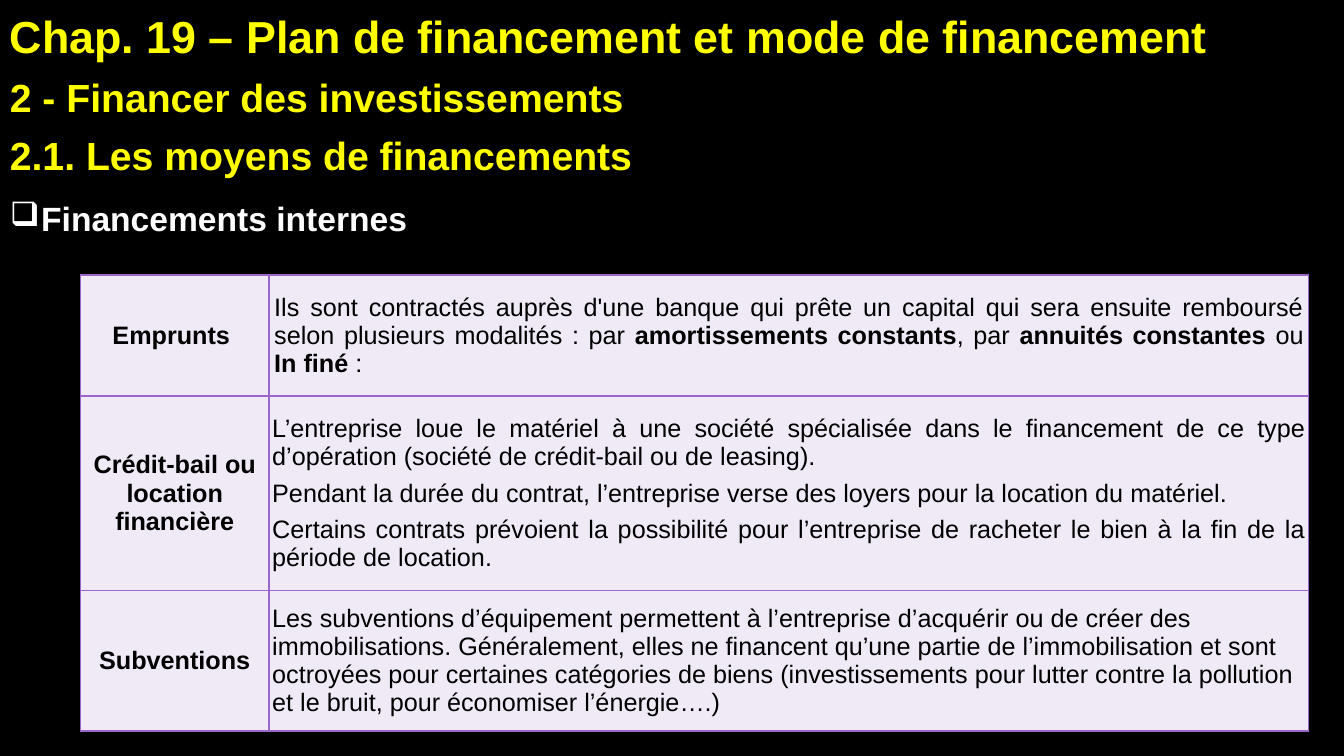
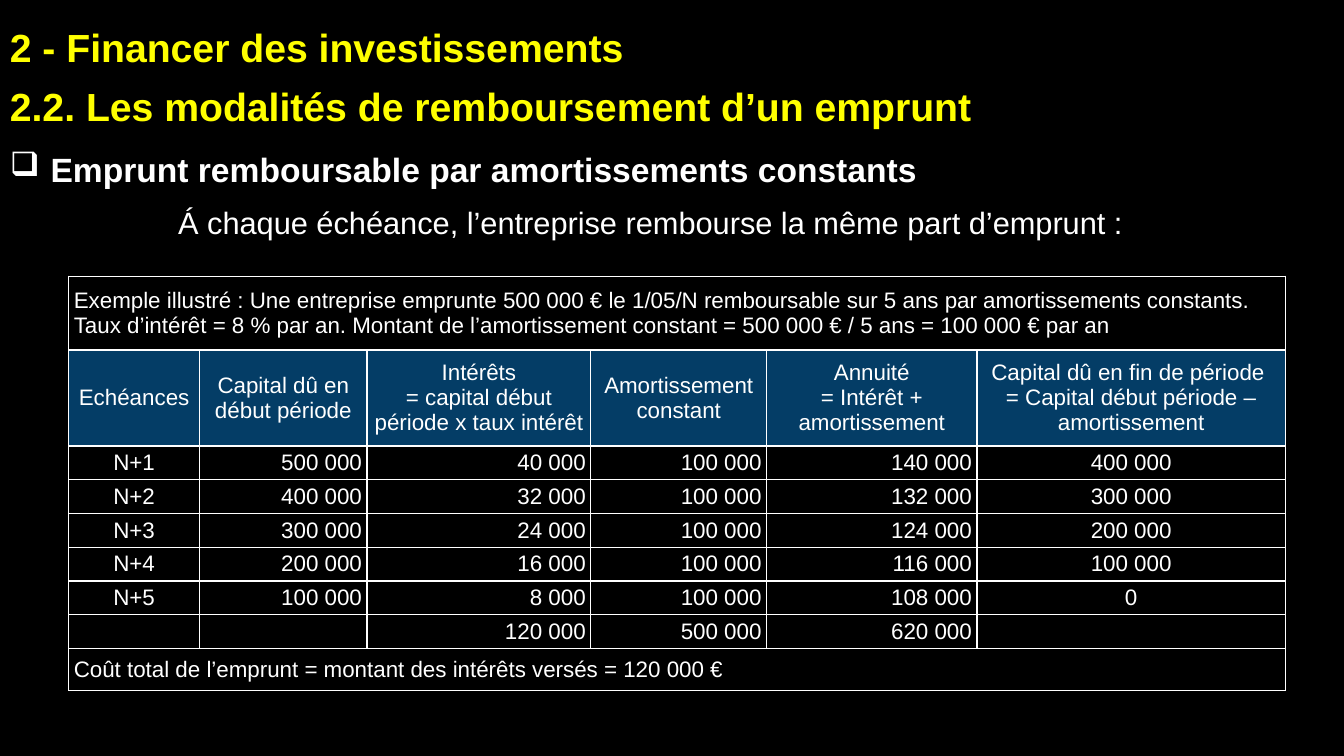
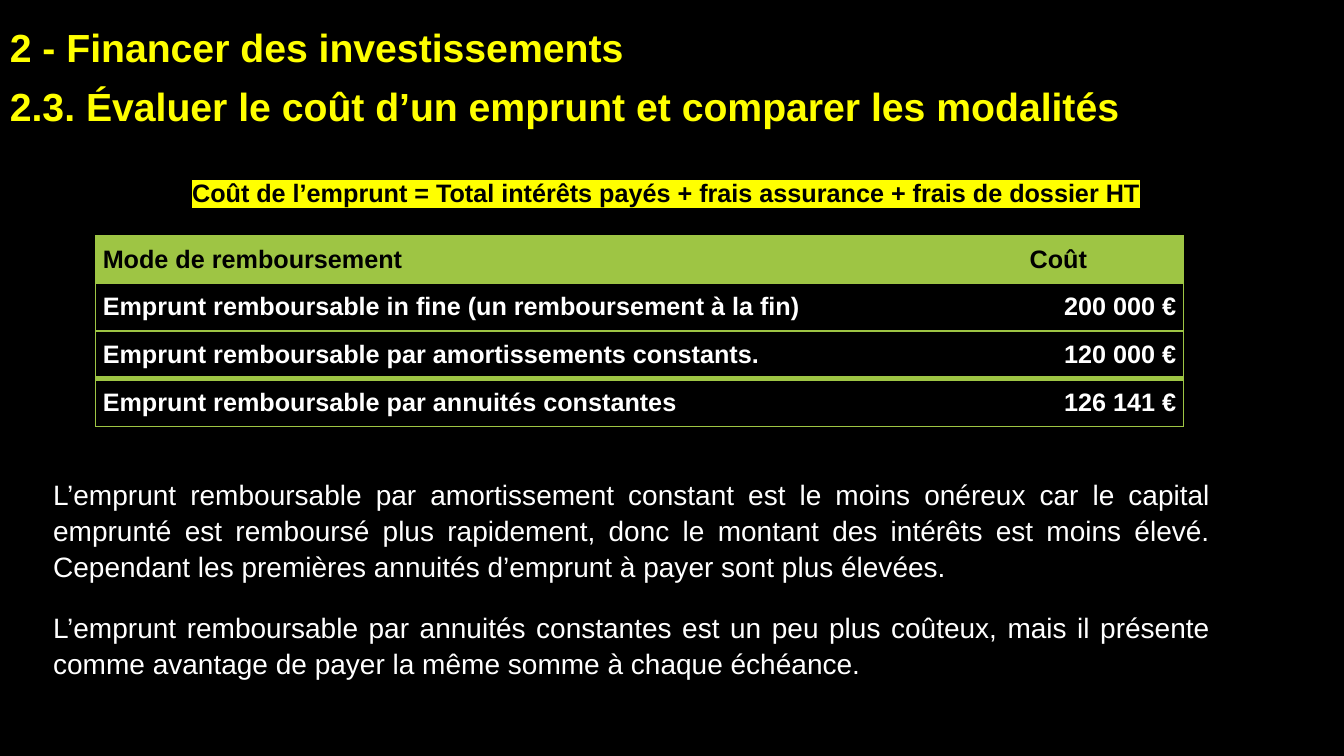
from dataclasses import dataclass

from lxml.etree import SubElement
from pptx import Presentation
from pptx.dml.color import RGBColor
from pptx.enum.text import MSO_ANCHOR, MSO_AUTO_SIZE, PP_ALIGN
from pptx.oxml.ns import qn
from pptx.util import Cm, Pt

LEFT, CENTER, RIGHT, JUSTIFY = (
    PP_ALIGN.LEFT, PP_ALIGN.CENTER, PP_ALIGN.RIGHT, PP_ALIGN.JUSTIFY)


@dataclass(frozen=True)
class Theme:
    font: str = "Arial"
    background: str = "000000"
    heading: str = "FFFF00"
    light: str = "FFFFFF"
    dark: str = "000000"
    lilac: str = "EFEAF6"
    violet: str = "9A66CA"
    navy: str = "043D66"
    green: str = "9EC544"
    chapter_size: int = 32
    heading_size: int = 28
    topic_size: int = 24
    lead_size: int = 22
    body_size: int = 20
    table_size: int = 18
    small_size: int = 16
    line_spacing: float = 1.07


THEME = Theme()


@dataclass(frozen=True)
class Style:
    size: int
    color: str
    bold: bool = False
    align: PP_ALIGN = LEFT
    before: int = 0
    after: int = 0
    highlight: str = ""
    bullet: str = ""


CHAPTER = Style(THEME.chapter_size, THEME.heading, True, before=3, after=3)
SECTION = Style(THEME.heading_size, THEME.heading, True, before=12, after=6)
SUBSECTION = Style(THEME.heading_size, THEME.heading, True, after=6)
TOPIC = Style(THEME.topic_size, THEME.light, True, before=6, after=6, bullet="❑")
LEAD = Style(THEME.lead_size, THEME.light, after=6)
BODY = Style(THEME.body_size, THEME.light, align=JUSTIFY, before=18)
FORMULA = Style(THEME.table_size, THEME.dark, True, CENTER, 6, 6, THEME.heading)


def rgb(value):
    return RGBColor.from_string(value)


def add_solid_fill(parent, color):
    fill = SubElement(parent, qn("a:solidFill"))
    SubElement(fill, qn("a:srgbClr"), val=color)


def add_run(paragraph, text, style, bold):
    run = paragraph.add_run()
    run.text = text
    run.font.name = THEME.font
    run.font.size = Pt(style.size)
    run.font.bold = bold
    run.font.color.rgb = rgb(style.color)
    if style.highlight:
        properties = run.font._element
        highlight = SubElement(properties, qn("a:highlight"))
        SubElement(highlight, qn("a:srgbClr"), val=style.highlight)
        properties.find(qn("a:solidFill")).addnext(highlight)


def write_paragraphs(frame, content, line_spacing=None):
    """Write (text, style) pairs; text may be a list of (text, bold) runs."""
    for index, (text, style) in enumerate(content):
        paragraph = frame.add_paragraph() if index else frame.paragraphs[0]
        paragraph.alignment = style.align
        paragraph.space_before = Pt(style.before)
        paragraph.space_after = Pt(style.after)
        if line_spacing:
            paragraph.line_spacing = line_spacing
        if style.bullet:
            properties = paragraph._p.get_or_add_pPr()
            hanging = Cm(0.79)
            properties.set("marL", str(hanging))
            properties.set("indent", str(-hanging))
            SubElement(properties, qn("a:buChar"), char=style.bullet)
        runs = [(text, style.bold)] if isinstance(text, str) else text
        for run_text, bold in runs:
            add_run(paragraph, run_text, style, bold)


def add_text(slide, left, top, width, height, content):
    box = slide.shapes.add_textbox(Cm(left), Cm(top), Cm(width), Cm(height))
    frame = box.text_frame
    frame.word_wrap = True
    frame.auto_size = MSO_AUTO_SIZE.SHAPE_TO_FIT_TEXT
    write_paragraphs(frame, content, THEME.line_spacing)


def add_headings(slide, top, subsection, topic=None):
    content = [("2 - Financer des investissements", SECTION), (subsection, SUBSECTION)]
    if topic:
        content.append((topic, TOPIC))
    add_text(slide, 0, top, 30.76, 4.32 if topic else 2.87, content)


def add_table(slide, left, top, widths, heights):
    table = slide.shapes.add_table(
        len(heights), len(widths), Cm(left), Cm(top),
        Cm(sum(widths)), Cm(sum(heights))).table
    table.first_row = table.horz_banding = False
    for column, width in zip(table.columns, widths):
        column.width = Cm(width)
    for row, height in zip(table.rows, heights):
        row.height = Cm(height)
    return table


def set_borders(cell, color, left=1, right=1, top=1, bottom=1):
    """Draw the four borders; a width of 0 leaves the side without a line."""
    properties = cell._tc.get_or_add_tcPr()
    for side, width in zip("LRTB", (left, right, top, bottom)):
        line = SubElement(properties, qn(f"a:ln{side}"), w=str(Pt(width)))
        if width:
            add_solid_fill(line, color)
        else:
            SubElement(line, qn("a:noFill"))


def format_cell(cell, content, inset, line_color, fill=None, **borders):
    cell.vertical_anchor = MSO_ANCHOR.MIDDLE
    cell.margin_left = cell.margin_right = Cm(inset)
    cell.margin_top = cell.margin_bottom = 0
    set_borders(cell, line_color, **borders)
    if fill:
        cell.fill.solid()
        cell.fill.fore_color.rgb = rgb(fill)
    else:
        cell.fill.background()
    write_paragraphs(cell.text_frame, content)


def add_slide(presentation):
    slide = presentation.slides.add_slide(presentation.slide_layouts[6])
    slide.background.fill.solid()
    slide.background.fill.fore_color.rgb = rgb(THEME.background)
    return slide


def build_funding_sources(presentation):
    slide = add_slide(presentation)
    add_text(slide, 0, 0, 33.45, 1.63, [
        ("Chap. 19 – Plan de financement et mode de financement", CHAPTER)])

    size, dark = THEME.table_size, THEME.dark
    label = Style(size, dark, True, CENTER)
    loan = Style(size, dark, align=JUSTIFY, after=3)
    lease = Style(size, dark, align=JUSTIFY, after=6)
    grant = Style(size, dark, before=6, after=6)
    loan_runs = [
        ("Ils sont contractés auprès d'une banque qui prête un capital qui sera "
         "ensuite remboursé selon plusieurs modalités : par", False),
        (" amortissements constants", True), (", par", False),
        (" annuités constantes", True), (" ou ", False),
        ("In finé", True), (" : ", False)]
    rows = [
        ("Emprunts ", [(loan_runs, loan)], 0.13),
        ("Crédit-bail ou location financière", [
            ("L’entreprise loue le matériel à une société spécialisée dans le "
             "financement de ce type d’opération (société de crédit-bail ou de "
             "leasing).", lease),
            ("Pendant la durée du contrat, l’entreprise verse des loyers pour la "
             "location du matériel.", lease),
            ("Certains contrats prévoient la possibilité pour l’entreprise de "
             "racheter le bien à la fin de la période de location.", lease)], 0.08),
        ("Subventions", [
            ("Les subventions d’équipement permettent à l’entreprise d’acquérir ou "
             "de créer des immobilisations. Généralement, elles ne financent qu’une "
             "partie de l’immobilisation et sont octroyées pour certaines catégories "
             "de biens (investissements pour lutter contre la pollution et le bruit, "
             "pour économiser l’énergie….)", grant)], 0.08),
    ]
    table = add_table(slide, 2.03, 6.93, [4.75, 26.2], [3.05, 4.9, 3.54])
    for index, (name, description, inset) in enumerate(rows):
        format_cell(table.cell(index, 0), [(name, label)], 0.08,
                    THEME.violet, THEME.lilac)
        format_cell(table.cell(index, 1), description, inset,
                    THEME.violet, THEME.lilac)
    add_headings(slide, 1.63, "2.1. Les moyens de financements",
                 "Financements internes")


def build_constant_repayment(presentation):
    slide = add_slide(presentation)
    add_headings(slide, 0.38, "2.2. Les modalités de remboursement d’un emprunt",
                 " Emprunt remboursable par amortissements constants")
    add_text(slide, 4.24, 4.95, 30.53, 1.19, [
        ("Á chaque échéance, l’entreprise rembourse la même part d’emprunt :", LEAD)])

    rows = [
        ["Exemple illustré : Une entreprise emprunte 500 000 € le 1/05/N remboursable "
         "sur 5 ans par amortissements constants. Taux d’intérêt = 8 % par an. Montant "
         "de l’amortissement constant = 500 000 € / 5 ans = 100 000 € par an"],
        ["Echéances", "Capital dû en début période",
         "Intérêts\n= capital début période x taux intérêt",
         "Amortissement constant", "Annuité\n= Intérêt + amortissement",
         "Capital dû en fin de période \n= Capital début période – amortissement"],
        ["N+1", "500 000", "40 000", "100 000", "140 000", "400 000"],
        ["N+2", "400 000", "32 000", "100 000", "132 000", "300 000"],
        ["N+3", "300 000", "24 000", "100 000", "124 000", "200 000"],
        ["N+4", "200 000", "16 000", "100 000", "116 000", "100 000"],
        ["N+5", "100 000", "8 000", "100 000", "108 000", "0"],
        ["", "", "120 000", "500 000", "620 000", ""],
        ["Coût total de l’emprunt = montant des intérêts versés = 120 000 €"],
    ]
    widths = [3.3, 4.22, 5.64, 4.43, 5.3, 7.77]
    table = add_table(slide, 1.73, 6.96, widths, [1.86, 2.42] + [0.85] * 6 + [1.06])
    last = len(widths) - 1
    for row_index, texts in enumerate(rows):
        is_note, is_header = len(texts) == 1, row_index == 1
        if is_note:
            table.cell(row_index, 0).merge(table.cell(row_index, last))
        for column in range(len(widths)):
            text = texts[column] if column < len(texts) else ""
            if is_note:
                align = LEFT
            else:
                align = CENTER if is_header or column in (0, last) else RIGHT
            style = Style(THEME.small_size, THEME.light, align=align)
            content = [(line, style) for line in text.split("\n")] if text else []
            format_cell(table.cell(row_index, column), content, 0.13, THEME.light,
                        THEME.navy if is_header else None)


def build_cost_comparison(presentation):
    slide = add_slide(presentation)
    add_headings(slide, 0.38,
                 "2.3. Évaluer le coût d’un emprunt et comparer les modalités")
    add_text(slide, 4.32, 4.29, 24.94, 1.02, [
        ("Coût de l’emprunt = Total intérêts payés + frais assurance + frais de "
         "dossier HT", FORMULA)])

    rows = [
        ("Mode de remboursement", "Coût"),
        ("Emprunt remboursable in fine (un remboursement à la fin)", "200 000 €"),
        ("Emprunt remboursable par amortissements constants.", "120 000 €"),
        ("Emprunt remboursable par annuités constantes", "126 141 €"),
    ]
    line_above = [1, 1, 1, 4]
    line_below = line_above[1:] + [1]
    table = add_table(slide, 2.41, 5.94, [21.11, 6.3], [1.2] * len(rows))
    for row_index, texts in enumerate(rows):
        is_header = row_index == 0
        color = THEME.dark if is_header else THEME.light
        aligns = (LEFT, CENTER if is_header else RIGHT)
        for column, (text, align) in enumerate(zip(texts, aligns)):
            style = Style(THEME.table_size, color, True, align)
            format_cell(table.cell(row_index, column), [(text, style)], 0.18,
                        THEME.green, THEME.green if is_header else None,
                        left=1 - column, right=column,
                        top=line_above[row_index], bottom=line_below[row_index])

    add_text(slide, 1.09, 11.84, 29.67, 5.18, [
        ("L’emprunt remboursable par amortissement constant est le moins onéreux car "
         "le capital emprunté est remboursé plus rapidement, donc le montant des "
         "intérêts est moins élevé. Cependant les premières annuités d’emprunt à "
         "payer sont plus élevées.", BODY),
        ("L’emprunt remboursable par annuités constantes est un peu plus coûteux, "
         "mais il présente comme avantage de payer la même somme à chaque échéance.",
         BODY)])


def main():
    presentation = Presentation()
    presentation.slide_width = Cm(33.87)
    presentation.slide_height = Cm(19.05)
    build_funding_sources(presentation)
    build_constant_repayment(presentation)
    build_cost_comparison(presentation)
    presentation.save("out.pptx")


if __name__ == "__main__":
    main()
